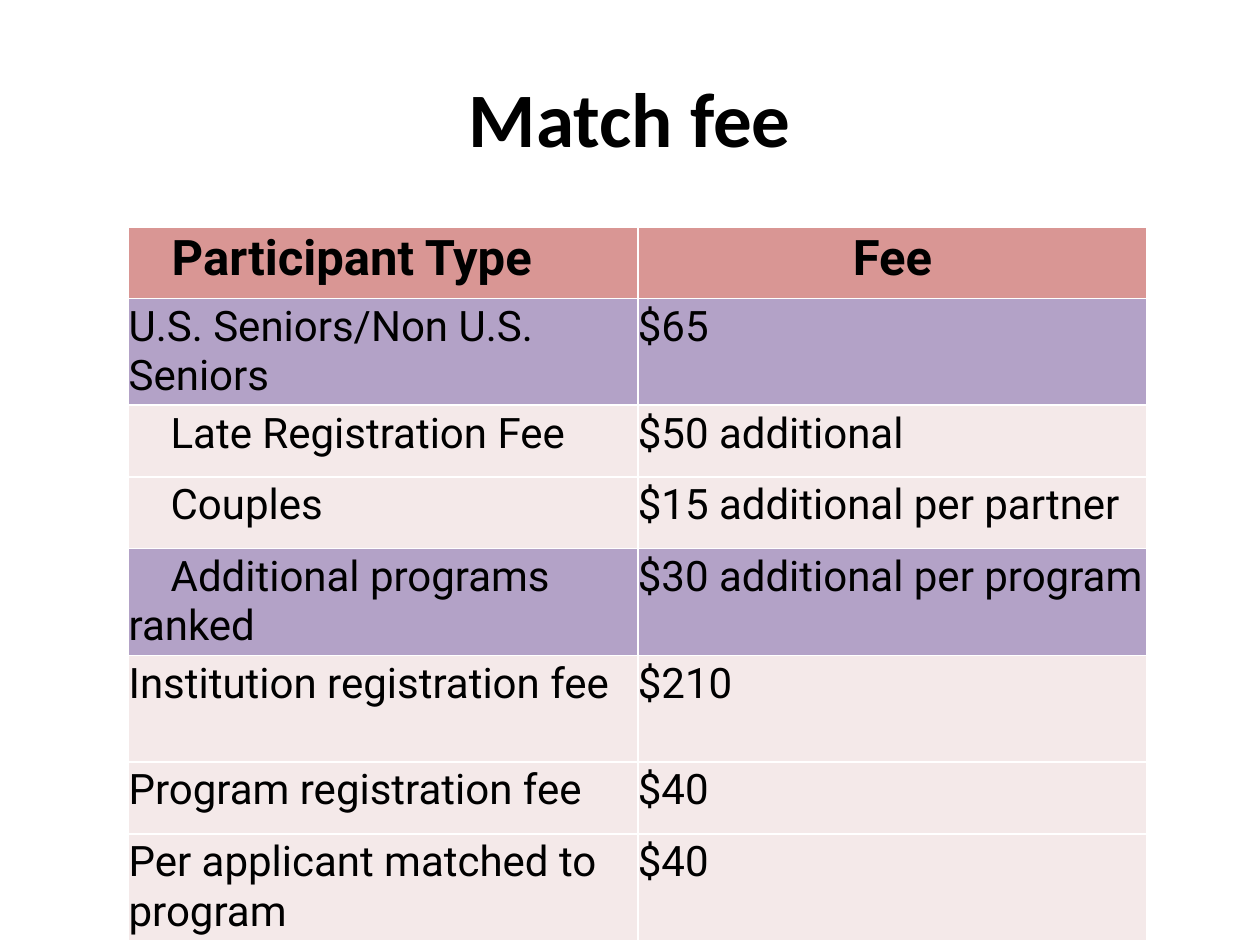
from pptx import Presentation
from pptx.dml.color import RGBColor
from pptx.enum.text import MSO_ANCHOR, PP_ALIGN
from pptx.oxml.ns import qn
from pptx.util import Pt
from lxml.etree import SubElement

BLACK = RGBColor(0x00, 0x00, 0x00)
WHITE = RGBColor(0xFF, 0xFF, 0xFF)
ROSE = RGBColor(0xD9, 0x96, 0x94)
LILAC = RGBColor(0xB3, 0xA2, 0xC7)
BLUSH = RGBColor(0xF4, 0xE9, 0xE9)

COLUMN_WIDTH = Pt(291)
ROW_HEIGHT = Pt(41)
TALL_ROW_HEIGHT = Pt(61)
SUBFEE_INDENT = Pt(24)
HEADINGS = ("Participant Type", "Fee")
FEES = [
    ("U.S. Seniors/Non U.S. Seniors", "$65"),
    ("Late Registration Fee", "$50 additional"),
    ("Couples", "$15 additional per partner"),
    ("Additional programs ranked", "$30 additional per program"),
    ("Institution registration fee", "$210"),
    ("Program registration fee", "$40"),
    ("Per applicant matched to program", "$40"),
]
SUBFEE_ROWS = (2, 3, 4)
LILAC_ROWS = (1, 4)
TALL_ROWS = (1, 4, 5, 7)


def style_font(font, name, size, bold):
    """Apply a typeface, size and weight in black."""
    font.name = name
    font.size = Pt(size)
    font.bold = bold
    font.color.rgb = BLACK


def add_title(slide, wording):
    """Place and format the title placeholder."""
    title = slide.shapes.title
    title.left, title.top, title.width, title.height = Pt(36), Pt(21.6), Pt(648), Pt(90)
    frame = title.text_frame
    frame.text = wording
    frame.vertical_anchor = MSO_ANCHOR.MIDDLE
    heading = frame.paragraphs[0]
    heading.alignment = PP_ALIGN.CENTER
    style_font(heading.runs[0].font, "Calibri", 44, True)


def add_borders(cell):
    """Draw a thin white line on every side of a cell."""
    properties = cell._tc.get_or_add_tcPr()
    for side in ("a:lnL", "a:lnR", "a:lnT", "a:lnB"):
        line = SubElement(properties, qn(side), w=str(Pt(1)))
        fill = SubElement(line, qn("a:solidFill"))
        SubElement(fill, qn("a:srgbClr"), val=str(WHITE))


def fill_cell(cell, wording, colour, is_heading):
    """Write and format one table cell."""
    add_borders(cell)
    cell.fill.solid()
    cell.fill.fore_color.rgb = colour
    cell.margin_left = cell.margin_right = Pt(0)
    cell.margin_top = cell.margin_bottom = Pt(2.16)
    cell.text_frame.text = wording
    entry = cell.text_frame.paragraphs[0]
    entry.alignment = PP_ALIGN.CENTER if is_heading else PP_ALIGN.LEFT
    style_font(entry.runs[0].font, "Roboto", 28 if is_heading else 24, is_heading)


def indent_first_line(cell):
    """Indent the first line of a dependent fee."""
    properties = cell.text_frame.paragraphs[0]._p.get_or_add_pPr()
    properties.set("marL", "0")
    properties.set("indent", str(SUBFEE_INDENT))


def add_fee_table(slide):
    """Build the table of participant types and fees."""
    rows = [HEADINGS, *FEES]
    frame = slide.shapes.add_table(
        len(rows), len(HEADINGS), Pt(73.5), Pt(129.6),
        COLUMN_WIDTH * len(HEADINGS), ROW_HEIGHT * len(rows))
    table = frame.table
    table.horz_banding = False
    for column in table.columns:
        column.width = COLUMN_WIDTH
    for number, entries in enumerate(rows):
        table.rows[number].height = TALL_ROW_HEIGHT if number in TALL_ROWS else ROW_HEIGHT
        is_heading = number == 0
        colour = ROSE if is_heading else LILAC if number in LILAC_ROWS else BLUSH
        for column, wording in enumerate(entries):
            fill_cell(table.cell(number, column), wording, colour, is_heading)
        if number in SUBFEE_ROWS:
            indent_first_line(table.cell(number, 0))
    table.cell(0, 0).margin_right = Pt(36)


def main():
    """Create the match fee slide."""
    deck = Presentation()
    deck.slide_width, deck.slide_height = Pt(720), Pt(540)
    slide = deck.slides.add_slide(deck.slide_layouts[5])
    add_title(slide, "Match fee")
    add_fee_table(slide)
    deck.save("out.pptx")


if __name__ == "__main__":
    main()
